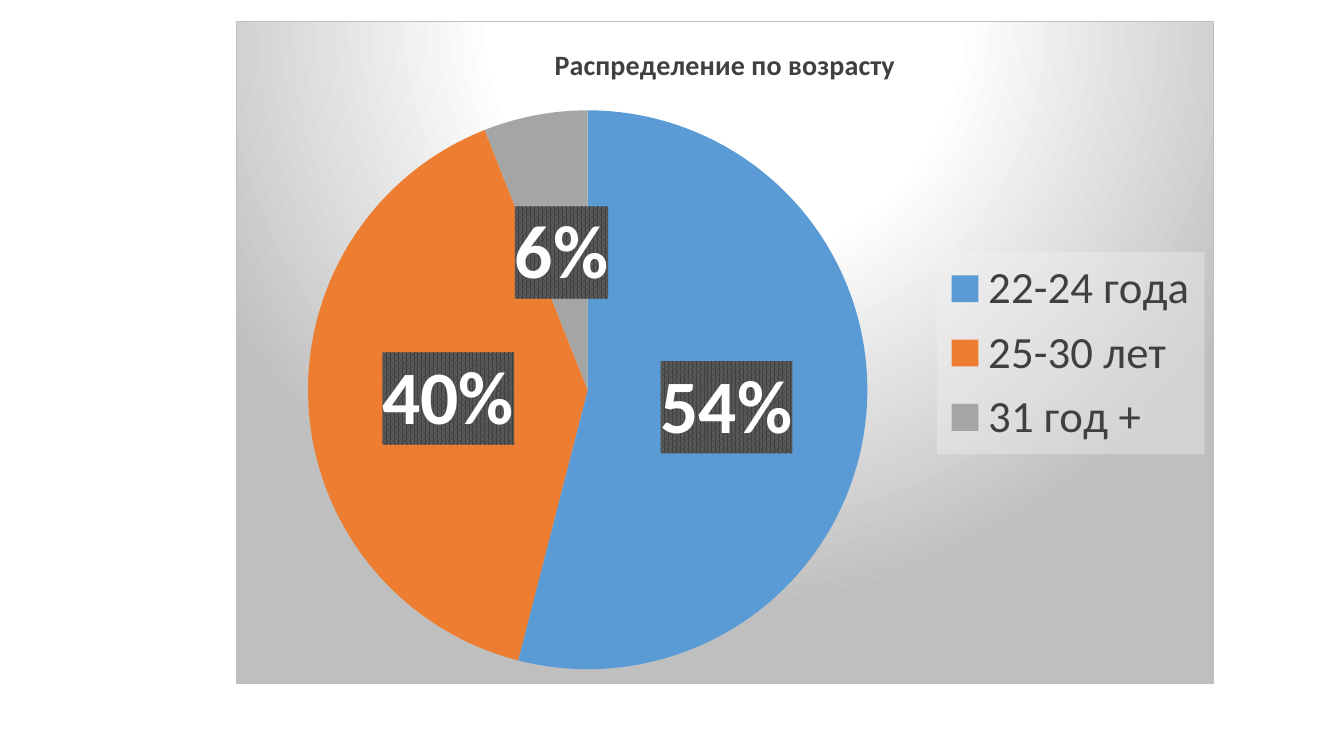
from lxml import etree
from pptx import Presentation
from pptx.chart.data import CategoryChartData
from pptx.dml.color import RGBColor
from pptx.enum.chart import XL_CHART_TYPE, XL_LABEL_POSITION, XL_LEGEND_POSITION
from pptx.oxml import parse_xml
from pptx.oxml.ns import nsdecls, qn
from pptx.util import Inches, Pt

AGE_SHARES = {
    "22-24 года": (54, "5B9BD5"),
    "25-30 лет": (40, "ED7D31"),
    "31 год +": (6, "A5A5A5"),
}


def rgb(value):
    """Turn a hex string into a colour."""
    return RGBColor.from_string(value)


def set_font(font, size, color, bold=False):
    """Format a font in the slide's typeface."""
    font.name = "Calibri"
    font.size = Pt(size)
    font.bold = bold
    font.color.rgb = rgb(color)


def clr(value, extra=""):
    """Return the XML of a solid colour."""
    return f'<a:srgbClr val="{value}">{extra}</a:srgbClr>'


def sp_pr(content):
    """Build chart shape properties around fill and line XML."""
    return parse_xml(f'<c:spPr {nsdecls("c", "a")}>{content}</c:spPr>')


def manual_layout(x, y, w, h, target=""):
    """Build a manual layout in fractions of the chart area."""
    layout = etree.Element(qn("c:layout"))
    manual = etree.SubElement(layout, qn("c:manualLayout"))
    values = {"layoutTarget": target, "xMode": "edge", "yMode": "edge",
              "x": x, "y": y, "w": w, "h": h}
    for name, value in values.items():
        if value != "":
            etree.SubElement(manual, qn(f"c:{name}")).set("val", str(value))
    return layout


def style_background(chart):
    """Give the chart area its radial gradient and thin border."""
    stops = "".join(f'<a:gs pos="{pos * 1000}">{clr(color)}</a:gs>'
                    for pos, color in ((0, "FFFFFF"), (39, "FFFFFF"), (100, "BFBFBF")))
    area = sp_pr(
        f'<a:gradFill><a:gsLst>{stops}</a:gsLst><a:path path="circle">'
        '<a:fillToRect l="50000" t="-80000" r="50000" b="180000"/></a:path></a:gradFill>'
        f'<a:ln w="{Pt(0.75)}"><a:solidFill>{clr("BFBFBF")}</a:solidFill></a:ln>')
    chart._chartSpace.find(qn("c:chart")).addnext(area)


def style_title(chart, text):
    """Write the chart title."""
    chart.has_title = True
    tf = chart.chart_title.text_frame
    tf.text = text
    set_font(tf.paragraphs[0].font, 20, "404040", True)
    chart.chart_title.include_in_layout = False


def style_legend(chart):
    """Place the legend on a translucent panel at the right."""
    chart.has_legend = True
    legend = chart.legend
    legend.position = XL_LEGEND_POSITION.RIGHT
    legend.include_in_layout = False
    set_font(legend.font, 32, "404040")
    element = legend._element
    for old in element.findall(qn("c:layout")):
        element.remove(old)
    element.find(qn("c:legendPos")).addnext(manual_layout(0.717, 0.348, 0.274, 0.305))
    panel = clr("F2F2F2", '<a:alpha val="39000"/>')
    element.find(qn("c:overlay")).addnext(sp_pr(f"<a:solidFill>{panel}</a:solidFill>"))


def style_pie(chart):
    """Place the pie, colour its slices and label their percentages."""
    area = chart._chartSpace.find(f'.//{qn("c:plotArea")}')
    for old in area.findall(qn("c:layout")):
        area.remove(old)
    area.insert(0, manual_layout(0.073, 0.134, 0.573, 0.844, "inner"))

    plot = chart.plots[0]
    plot.vary_by_categories = True
    series = plot.series[0]
    for i, (_, color) in enumerate(AGE_SHARES.values()):
        fill = series.points[i].format.fill
        fill.solid()
        fill.fore_color.rgb = rgb(color)

    labels = series.data_labels
    labels.show_percentage = True
    labels.show_value = False
    labels.number_format = "0%"
    labels.number_format_is_linked = False
    labels.position = XL_LABEL_POSITION.CENTER
    set_font(labels.font, 54, "FFFFFF", True)
    box = sp_pr(f'<a:pattFill prst="pct75"><a:fgClr>{clr("404040")}</a:fgClr>'
                f'<a:bgClr>{clr("595959")}</a:bgClr></a:pattFill>')
    labels._element.find(qn("c:txPr")).addprevious(box)


def add_age_chart(s):
    """Add the pie chart of age groups."""
    data = CategoryChartData()
    data.categories = list(AGE_SHARES)
    data.add_series("Series 1", [share for share, _ in AGE_SHARES.values()])
    chart = s.shapes.add_chart(XL_CHART_TYPE.PIE, Inches(2.34), Inches(0.21),
                               Inches(9.7), Inches(6.58), data).chart
    set_font(chart.font, 10, "000000")
    style_background(chart)
    style_title(chart, "Распределение по возрасту")
    style_legend(chart)
    style_pie(chart)


def main():
    """Build and save the slide."""
    prs = Presentation()
    prs.slide_width, prs.slide_height = Inches(13.33), Inches(7.5)
    s = prs.slides.add_slide(prs.slide_layouts[6])
    add_age_chart(s)
    prs.save("out.pptx")


if __name__ == "__main__":
    main()
